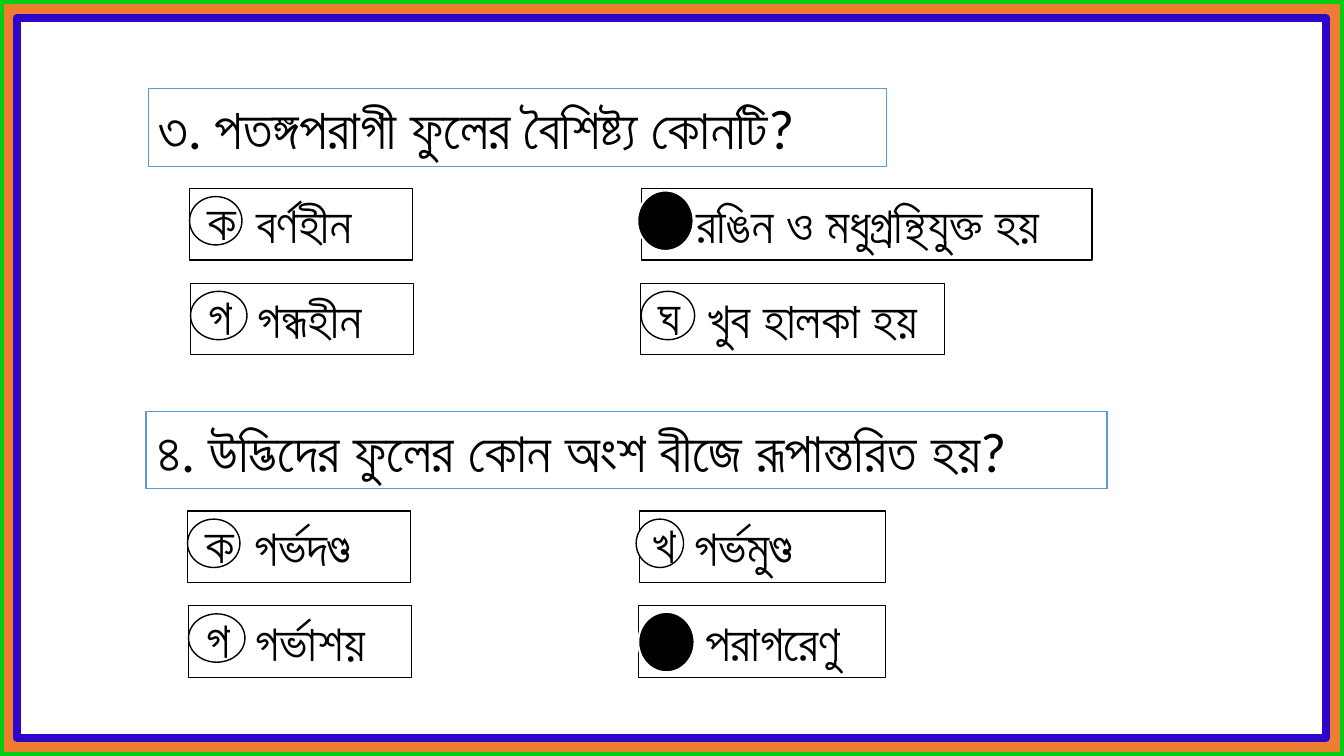
import pptx
import pptx.util
import pptx.dml.color
import pptx.enum.shapes
import pptx.enum.text

Inches = pptx.util.Inches
Pt = pptx.util.Pt
RGBColor = pptx.dml.color.RGBColor
Kind = pptx.enum.shapes.MSO_SHAPE
Anchor = pptx.enum.text.MSO_ANCHOR
Align = pptx.enum.text.PP_ALIGN
Fit = pptx.enum.text.MSO_AUTO_SIZE

WHITE = RGBColor(0xFF, 0xFF, 0xFF)
BLACK = RGBColor(0, 0, 0)
ORANGE = RGBColor(0xED, 0x7D, 0x31)
GREEN = RGBColor(0x02, 0xCE, 0x15)
VIOLET = RGBColor(0x2F, 0x05, 0xCB)
BLUE = RGBColor(0x5B, 0x9B, 0xD5)

WIDE, HIGH = 13.33, 7.5
GAP = 3.2      # from one question to the next
ROW = 0.94     # from one row of options to the next
SPACE = 0.113  # one step of indent before an option

deck = pptx.Presentation()
deck.slide_width, deck.slide_height = Inches(WIDE), Inches(HIGH)
slide = deck.slides.add_slide(deck.slide_layouts[6])


def draw(kind, left, top, width, height, fill, line, weight=1):
    shape = slide.shapes.add_shape(
        kind, Inches(left), Inches(top), Inches(width), Inches(height))
    shape.shadow.inherit = False
    shape.fill.solid()
    shape.fill.fore_color.rgb = fill
    shape.line.color.rgb = line
    shape.line.width = Pt(weight)
    return shape


def write(shape, text, size, align=Align.LEFT, steps=0):
    frame = shape.text_frame
    frame.text = text
    frame.word_wrap = True
    frame.margin_left = Inches(0.1 + steps * SPACE)
    if align == Align.LEFT:
        frame.vertical_anchor = Anchor.TOP
        frame.auto_size = Fit.SHAPE_TO_FIT_TEXT
    else:
        frame.vertical_anchor = Anchor.MIDDLE
    frame.paragraphs[0].alignment = align
    font = frame.paragraphs[0].runs[0].font
    font.name, font.size = "Calibri", Pt(size)
    font.color.rgb = BLACK


# Border
draw(Kind.FRAME, 0, 0, WIDE, HIGH, ORANGE, GREEN, 6)
draw(Kind.RECTANGLE, 0.17, 0.18, 12.98, 7.14, WHITE, VIOLET, 6)

# Places for the options: letter, left from the question, ring shift,
# ring width, dot shift across and down, indent steps
slots = [
    ("ক", 0.41, 0, 0.52, 0, 0, 5),
    ("খ", 4.89, -0.03, 0.47, -0.04, 0.02, 4),
    ("গ", 0.42, 0, 0.56, 0, 0, 5),
    ("ঘ", 4.88, 0.01, 0.53, 0, 0.06, 5),
]

# Questions: left, width, wording, right answer, options with box widths
quiz = [
    (1.47, 7.32, "৩. পতঙ্গপরাগী ফুলের বৈশিষ্ট্য কোনটি?", "খ",
     [("বর্ণহীন", 2.21), ("রঙিন ও মধুগ্রন্থিযুক্ত হয়", 4.47),
      ("গন্ধহীন", 2.21), ("খুব হালকা হয়", 3.02)]),
    (1.45, 9.53, "৪. উদ্ভিদের ফুলের কোন অংশ বীজে রূপান্তরিত হয়?", "ঘ",
     [("গর্ভদণ্ড", 2.21), ("গর্ভমুণ্ড", 2.44),
      ("গর্ভাশয়", 2.21), ("পরাগরেণু", 2.45)]),
]

for n, (left, width, ask, right, options) in enumerate(quiz):
    top = 0.88 + n * GAP
    box = draw(Kind.RECTANGLE, left, top, width, 0.77, WHITE, BLUE)
    write(box, ask, 40)

    for i, (slot, (text, wide)) in enumerate(zip(slots, options)):
        letter, shift, nudge, ring, across, down, steps = slot
        x = left + shift
        y = top + 0.99 + i // 2 * ROW
        box = draw(Kind.RECTANGLE, x, y, wide, 0.71, WHITE, BLACK)
        write(box, text, 36, steps=steps)

        # A black dot marks the right answer, a ring holds any other letter
        if letter == right:
            draw(Kind.OVAL, x + across, y + down, 0.56, 0.6,
                 BLACK, WHITE, 1.5)
        else:
            oval = draw(Kind.OVAL, x + nudge, y + 0.08, ring, 0.48,
                        WHITE, BLACK)
            write(oval, letter, 36, Align.CENTER)

deck.save("out.pptx")
